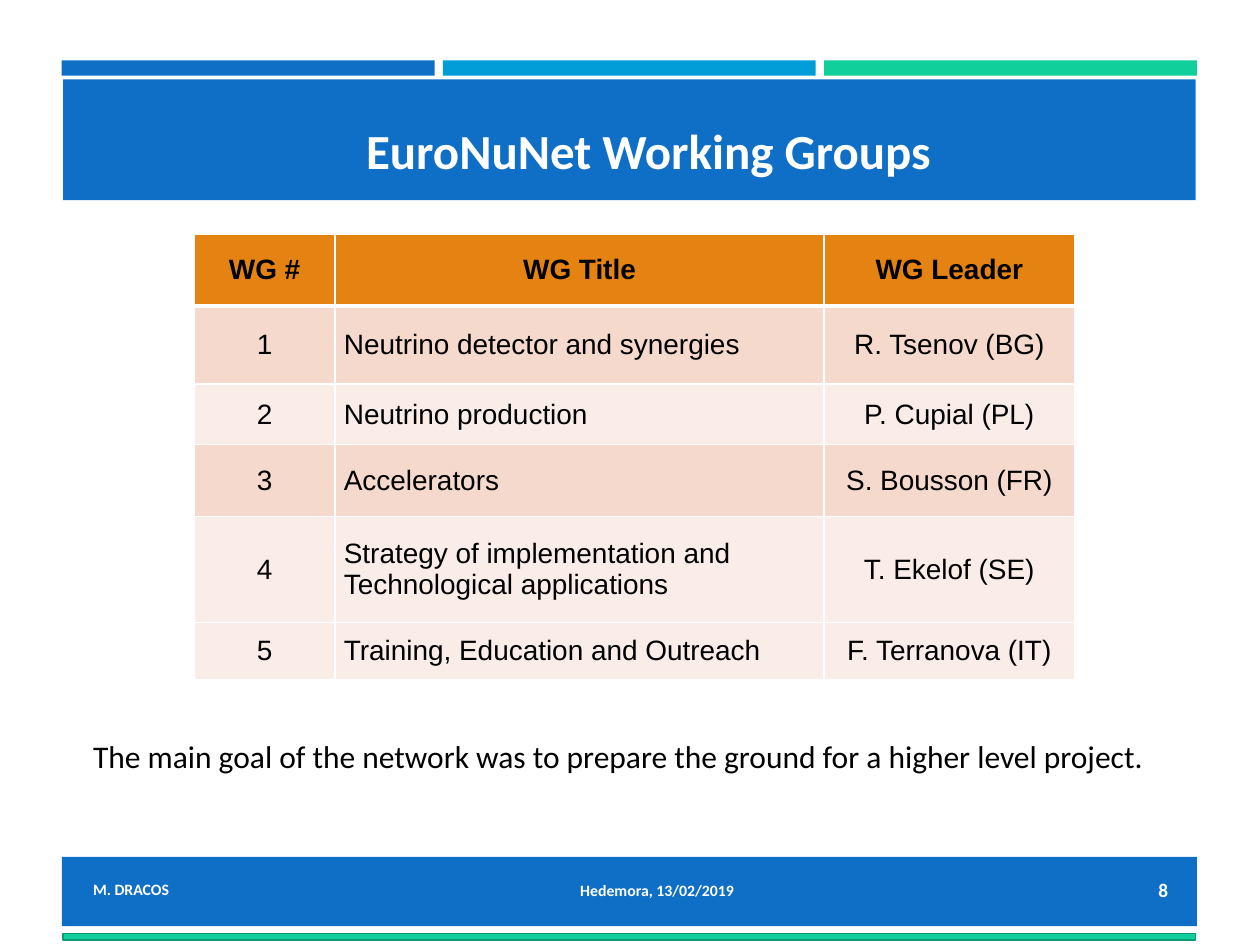
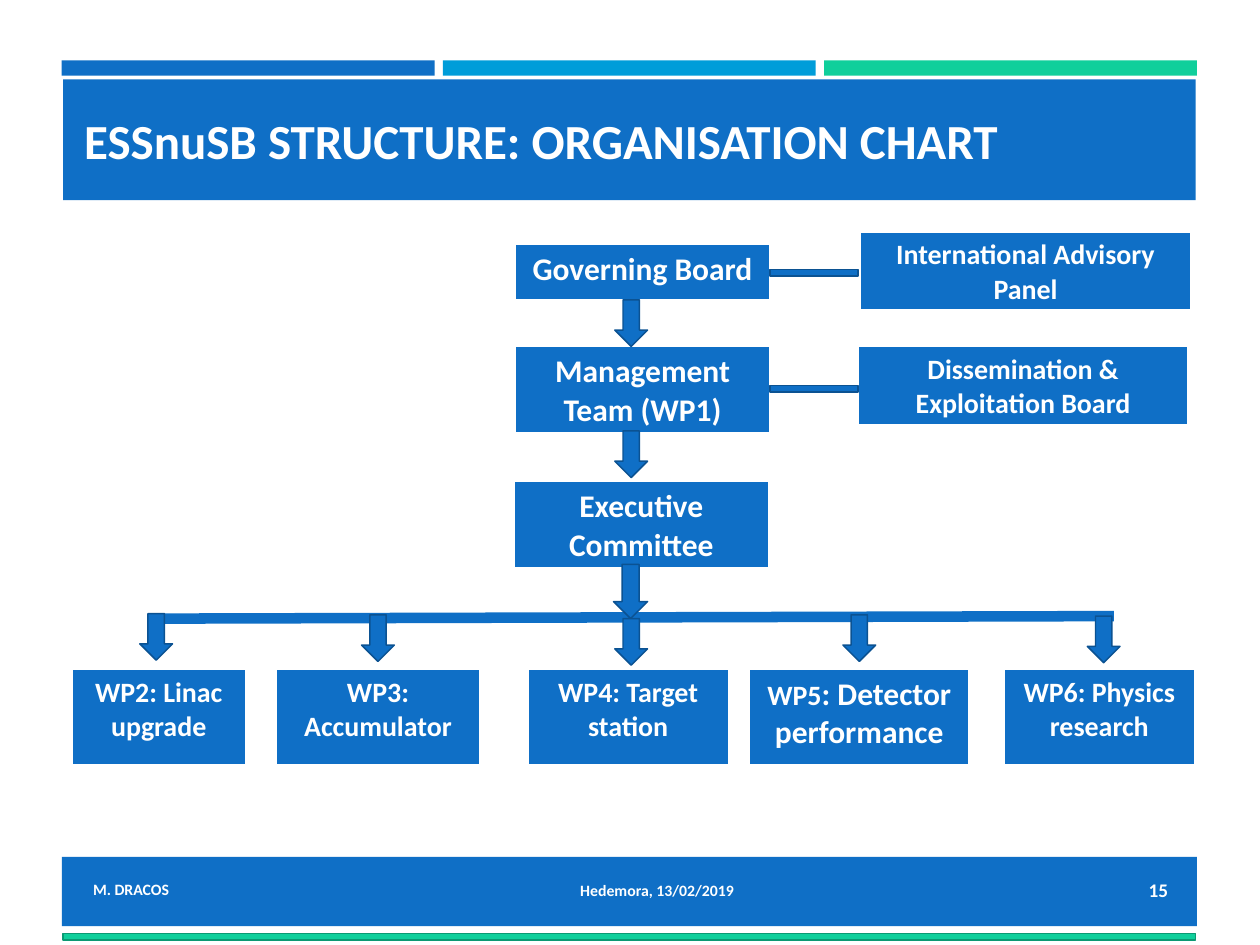
from collections import namedtuple
from lxml.etree import SubElement as Sub
from pptx import Presentation
from pptx.dml.color import RGBColor as Rgb
from pptx.enum.shapes import MSO_CONNECTOR as Conn, MSO_SHAPE as Form
from pptx.enum.text import MSO_ANCHOR as Anchor, PP_ALIGN as Align
from pptx.oxml.ns import qn
from pptx.util import Inches, Pt

HUE = {"blue": "0F6FC6", "sky": "009DD9", "green": "10CF9B", "navy": "0B5292",
       "moss": "0C9973", "white": "FFFFFF", "black": "000000",
       "orange": "E48312", "peach": "F5D9CC", "cream": "FAEDE7"}
COLS, ROWS = 100, 75
WIDE, HIGH = Inches(10), Inches(7.5)
LEFT, MID, RIGHT = Align.LEFT, Align.CENTER, Align.RIGHT
Box = namedtuple("Box", "x y w h")

TOP = Box(4.9, 4.8, 90.1, 11.1)
BODY = Box(5.7, 18.4, 89.1, 42.4)
FOOT = Box(4.9, 68, 90.1, 6.6)

GROUPS = [
    ("WG #", "WG Title", "WG Leader"),
    ("1", "Neutrino detector and synergies", "R. Tsenov (BG)"),
    ("2", "Neutrino production", "P. Cupial (PL)"),
    ("3", "Accelerators", "S. Bousson (FR)"),
    ("4", "Strategy of implementation and Technological applications", "T. Ekelof (SE)"),
    ("5", "Training, Education and Outreach", "F. Terranova (IT)"),
]
TINTS = ["orange", "peach", "cream", "peach", "cream", "cream"]
BOARDS = [
    (35.2, 1, 20.2, 4.5, "Governing Board", 18),
    (62.6, 0, 26.2, 6.3, "International Advisory Panel", 16),
    (35.2, 9.1, 20.2, 7, "Management Team (WP1)", 18),
    (62.4, 9.1, 26.2, 6.3, "Dissemination & Exploitation Board", 16),
    (35.1, 19.8, 20.2, 7, "Executive Committee", 18),
]
PACKS = [
    (0, 13.8, 5.4, 30.3, [("WP2: Linac upgrade", 16)]),
    (16.2, 16.2, 23, 30.4, [("WP3: Accumulator", 16)]),
    (36.2, 15.9, 43.1, 30.7, [("WP4: Target station", 16)]),
    (53.8, 17.4, 61.2, 30.4, [("WP5", 16), (": Detector performance", 18)]),
    (74, 15.1, 80.6, 30.5, [("WP6: Physics research", 16)]),
]


def col(n):
    """Turn grid columns into a length."""
    return round(WIDE * n / COLS)


def row(n):
    """Turn grid rows into a length."""
    return round(HIGH * n / ROWS)


def place(box, x, y, w, h):
    """Give the slide lengths of a part set inside a box."""
    return col(box.x + x), row(box.y + y), col(w), row(h)


def tint(name):
    """Look up a colour."""
    return Rgb.from_string(HUE[name])


def write(frame, runs, align=LEFT, hue="white", face="Calibri", bold=True):
    """Put one paragraph into a frame, run by run."""
    para = frame.paragraphs[0]
    para.alignment = align
    for words, size in runs:
        run = para.add_run()
        run.text = words
        font = run.font
        font.name, font.size, font.bold = face, Pt(size), bold
        font.color.rgb = tint(hue)


def label(slide, spot, runs, align=LEFT, anchor=Anchor.MIDDLE, wrap=True, **look):
    """Add a text box."""
    frame = slide.shapes.add_textbox(*spot).text_frame
    frame.word_wrap, frame.vertical_anchor = wrap, anchor
    write(frame, runs, align, **look)


def block(slide, spot, hue="blue", edge=None, form=Form.RECTANGLE):
    """Add a filled shape, with a thin edge if one is named."""
    shape = slide.shapes.add_shape(form, *spot)
    shape.shadow.inherit = False
    shape.fill.solid()
    shape.fill.fore_color.rgb = tint(hue)
    if edge:
        shape.line.color.rgb = tint(edge)
        shape.line.width = Pt(0.85)
    else:
        shape.line.fill.background()


def table(slide, spot, rows, cols):
    """Add a table without banding."""
    grid = slide.shapes.add_table(rows, cols, *spot).table
    grid.first_row = grid.horz_banding = False
    return grid


def paint(cell, hue, top=1, base=1):
    """Give a cell white borders and a fill."""
    props = cell._tc.get_or_add_tcPr()
    for side, width in zip("LRTB", (1, 1, top, base)):
        line = Sub(props, qn("a:ln" + side), w=str(Pt(width)))
        Sub(Sub(line, qn("a:solidFill")), qn("a:srgbClr"), val=HUE["white"])
    cell.fill.solid()
    cell.fill.fore_color.rgb = tint(hue)


def head(slide, box):
    """Draw the three bands and the title bar."""
    for i, hue in enumerate(("blue", "sky", "green")):
        block(slide, place(box, i * 30.25, 0, 29.6, 1.2), hue)
    block(slide, place(box, 0.1, 1.5, 89.9, 9.6))


def foot(slide, box, page):
    """Draw the footer bar with its texts and the green rule."""
    block(slide, place(box, 0, 0, 90.1, 5.5))
    block(slide, place(box, 0.1, 6.1, 89.9, 0.5), "green", "moss")
    label(slide, place(box, 35.6, 1.4, 23.3, 2.5), [("Hedemora, 13/02/2019", 9)], MID)
    label(slide, place(box, 1.5, 1.3, 19.4, 2.5), [("M. DRACOS", 9)])
    label(slide, place(box, 80.4, 1.2, 8.4, 2.9), [(page, 11)], RIGHT)


def roster(slide, box):
    """Draw the table of working groups and the line below it."""
    grid = table(slide, place(box, 9.7, 0.2, 69.9, 35.4), len(GROUPS), 3)
    for part, width in zip(grid.columns, (11.2, 38.8, 19.9)):
        part.width = col(width)
    for part, height in zip(grid.rows, (5.7, 6.2, 4.8, 5.7, 8.4, 4.6)):
        part.height = row(height)
    for r, (words, hue) in enumerate(zip(GROUPS, TINTS)):
        for c, word in enumerate(words):
            cell = grid.cell(r, c)
            cell.vertical_anchor = Anchor.MIDDLE
            cell.margin_left = cell.margin_right = col(0.7)
            cell.margin_top = cell.margin_bottom = row(0.4)
            paint(cell, hue, 3 if r == 1 else 1, 3 if r == 0 else 1)
            write(cell.text_frame, [(word, 16)], LEFT if r and c == 1 else MID,
                  "black", "Arial", r == 0)
    goal = "The main goal of the network was to prepare the ground for a higher level project."
    label(slide, place(box, 0.7, 39.6, 86.4, 4), [(goal, 18)], anchor=Anchor.TOP,
          wrap=False, hue="black", bold=False)


def unit(slide, spot, runs):
    """Draw one body of the organisation as a single cell."""
    grid = table(slide, spot, 1, 1)
    cell = grid.cell(0, 0)
    paint(cell, "blue", base=3)
    write(cell.text_frame, runs, MID)


def arrow(slide, box, x, y, w=2.6, h=3.7):
    """Draw a down arrow."""
    block(slide, place(box, x, y, w, h), edge="navy", form=Form.DOWN_ARROW)


def chart(slide, box):
    """Draw the organisation chart."""
    for x, y, w, h, name, size in BOARDS:
        unit(slide, place(box, x, y, w, h), [(name, size)])
    for y in (5.4, 15.8):
        arrow(slide, box, 43.1, y)
    for y in (3, 12.2):
        block(slide, place(box, 55.4, y, 7, 0.5), edge="navy")
    x, y, w, h = place(box, 6.1, 30.7, 76.6, -0.2)
    rail = slide.shapes.add_connector(Conn.STRAIGHT, x, y, x + w, y + h)
    rail.line.color.rgb, rail.line.width = tint("blue"), Pt(6)
    Sub(rail._element.spPr, qn("a:effectLst"))
    arrow(slide, box, 43, 26.4, 2.7, 4.3)
    for x, w, tip, y, runs in PACKS:
        unit(slide, place(box, x, 34.7, w, 7.7), runs)
        arrow(slide, box, tip, y)


def page(deck, num, name, spot, align, fill):
    """Add a slide with the shared frame, its title and its body."""
    slide = deck.slides.add_slide(deck.slide_layouts[6])
    head(slide, TOP)
    label(slide, place(TOP, *spot), [(name, 28)], align, Anchor.BOTTOM)
    fill(slide, BODY)
    foot(slide, FOOT, num)


def main():
    """Build and save both slides."""
    deck = Presentation()
    deck.slide_width, deck.slide_height = WIDE, HIGH
    page(deck, "8", "EuroNuNet Working Groups", (8.8, -4.8, 75.5, 14.7), MID, roster)
    page(deck, "15", "ESSnuSB STRUCTURE: ORGANISATION CHART",
         (0.8, 3.4, 87.4, 5.7), LEFT, chart)
    deck.save("out.pptx")


if __name__ == "__main__":
    main()
